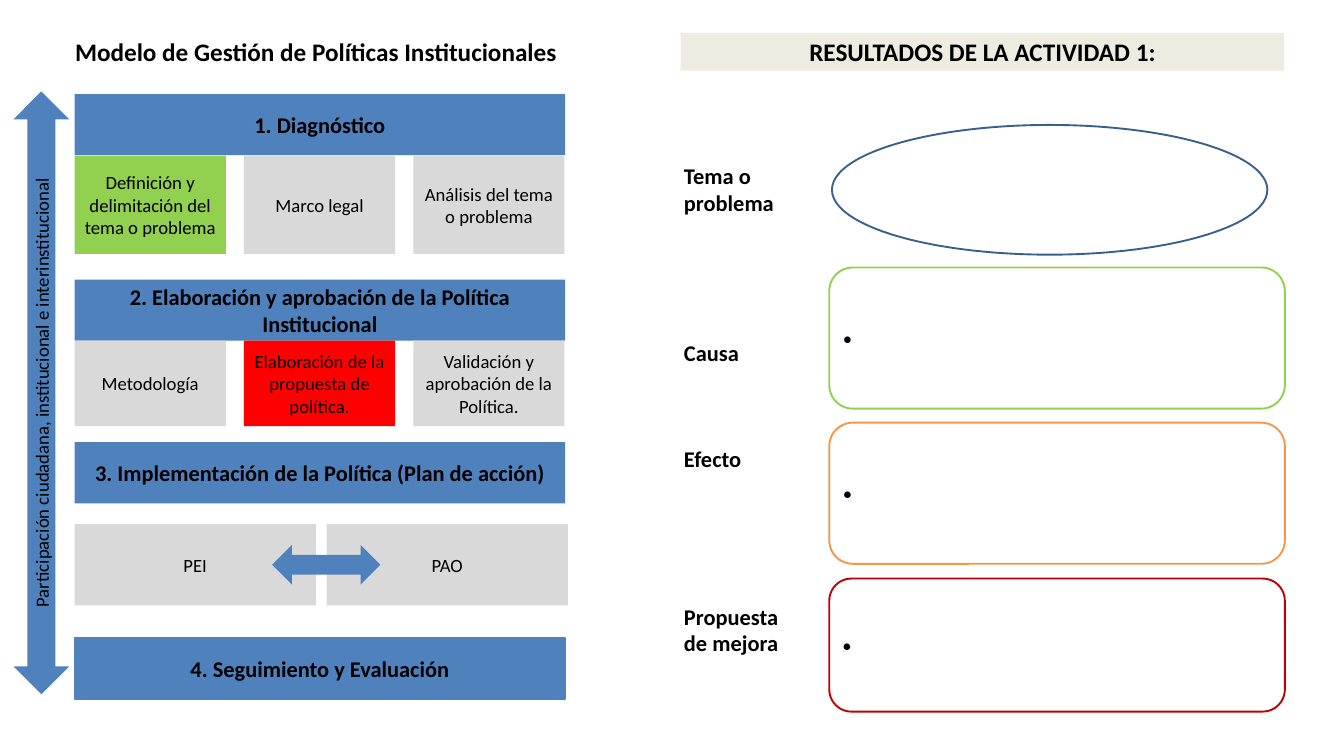
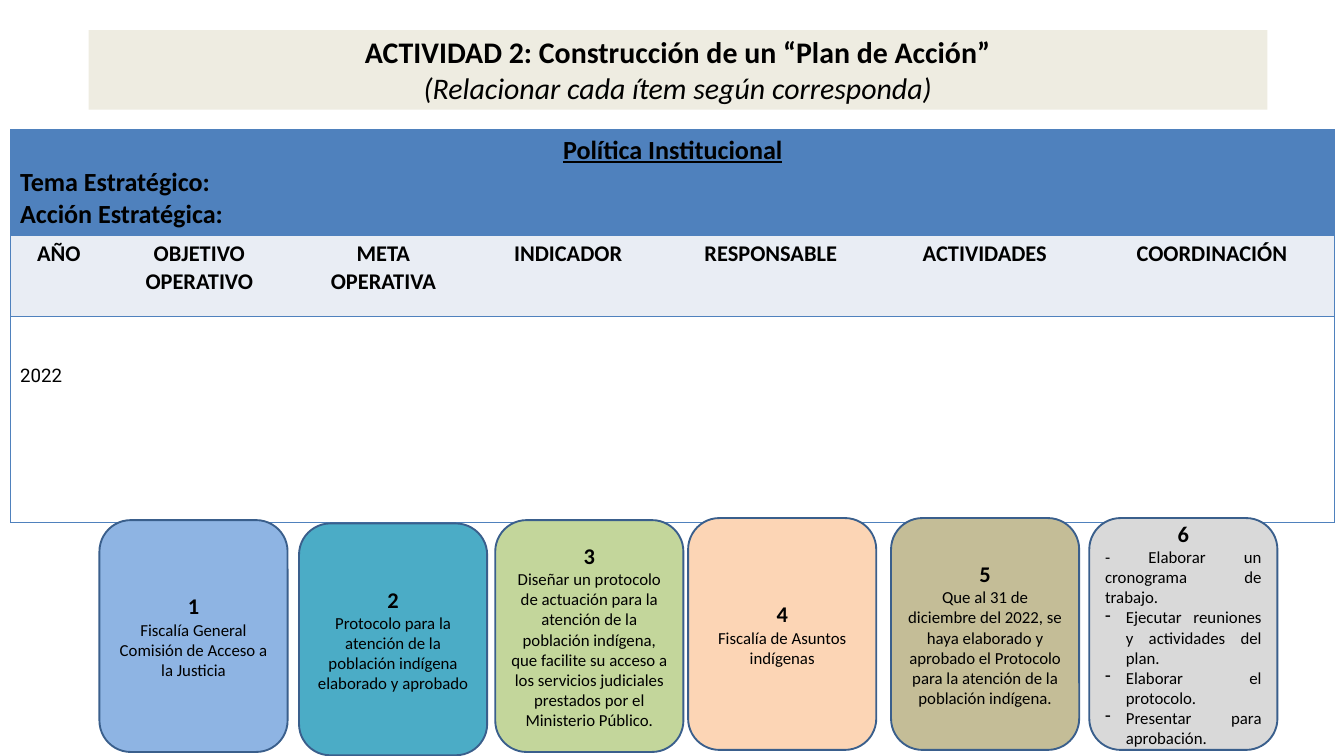
from dataclasses import dataclass

from lxml.etree import SubElement
from pptx import Presentation
from pptx.dml.color import RGBColor
from pptx.enum.shapes import MSO_SHAPE as Kind
from pptx.enum.text import MSO_ANCHOR as Anchor, PP_ALIGN as Align
from pptx.oxml.ns import qn
from pptx.util import Inches, Pt

# Shared look
WIDE, HIGH = 20, 11.25
FONT = "Calibri"
BLACK, WHITE = "000000", "FFFFFF"
BLUE, NAVY, GRAY = "4F81BD", "3A5F8C", "D9D9D9"
GREEN, RED, CREAM, PALE = "92D050", "FF0000", "EEECE1", "E9EDF4"
PLAIN = "{2D5ABB26-0587-4C30-8999-92F81FD0307C}"


@dataclass
class Box:
    """A place in percent of the slide's width and height."""
    x: float
    y: float
    w: float
    h: float

    def emu(self) -> tuple:
        return (Inches(self.x * WIDE / 100), Inches(self.y * HIGH / 100),
                Inches(self.w * WIDE / 100), Inches(self.h * HIGH / 100))


@dataclass
class Band:
    y: float
    text: str
    line: str | None = None


@dataclass
class Step:
    col: int
    text: str
    fill: str = GRAY


@dataclass
class Label:
    y: float
    w: float
    h: float
    text: str
    wrap: bool = False


@dataclass
class Frame:
    y: float
    h: float
    line: str


@dataclass
class Card:
    x: float
    y: float
    fill: str
    text: str
    just: str = ""
    dashes: str = ""


def color(code: str) -> RGBColor:
    return RGBColor.from_string(code)


def write(frame, text: str, *, size=20, bold=False, italic=False, under=False,
          align=Align.CENTER, font=FONT, dash=False) -> None:
    """Add each line of the text as a paragraph."""
    for line in text.split("\n"):
        last = frame.paragraphs[-1]
        para = frame.add_paragraph() if last.runs else last
        para.alignment = align
        run = para.add_run()
        run.text = line
        face = run.font
        face.name, face.size = font, Pt(size)
        face.bold, face.italic, face.underline = bold, italic, under
        face.color.rgb = color(BLACK)
        if dash:
            props = para._p.get_or_add_pPr()
            props.set("marL", str(Inches(0.31)))
            props.set("indent", str(-Inches(0.31)))
            SubElement(props, qn("a:buChar"), char="-")


def draw(slide, kind, box: Box, fill: str | None = None,
         line: str | None = None, anchor=Anchor.MIDDLE):
    shape = slide.shapes.add_shape(kind, *box.emu())
    shape.shadow.inherit = False
    if fill:
        shape.fill.solid()
        shape.fill.fore_color.rgb = color(fill)
    else:
        shape.fill.background()
    if line:
        shape.line.color.rgb = color(line)
        shape.line.width = Pt(2)
    else:
        shape.line.fill.background()
    shape.text_frame.word_wrap = True
    shape.text_frame.vertical_anchor = anchor
    return shape


def block(slide, box: Box, text: str, fill: str, line: str | None = None, **form):
    shape = draw(slide, Kind.RECTANGLE, box, fill, line)
    write(shape.text_frame, text, **form)


def note(slide, box: Box, text: str, wrap: bool = True, **form) -> None:
    frame = slide.shapes.add_textbox(*box.emu()).text_frame
    frame.word_wrap = wrap
    write(frame, text, bold=True, **form)


def head(slide, box: Box, text: str, size: int):
    """Draw the cream heading strip."""
    frame = draw(slide, Kind.RECTANGLE, box, CREAM, anchor=Anchor.TOP).text_frame
    write(frame, text, size=size, bold=True)
    return frame


def edge(cell, sides: str) -> None:
    """Rule the given sides, named in the order L, R, T, B."""
    props = cell._tc.get_or_add_tcPr()
    for spot, side in enumerate(sides):
        rule = SubElement(props, qn("a:ln" + side), w=str(Pt(1)))
        fill = SubElement(rule, qn("a:solidFill"))
        SubElement(fill, qn("a:srgbClr"), val=BLUE)
        props.insert(spot, rule)


# Slide 1: the model on the left
LEFT, FULL, BAR = 5.55, 36.5, 8.09
BANDS = [
    Band(12.44, "1. Diagnóstico"),
    Band(36.98, "2. Elaboración y aprobación de la Política Institucional"),
    Band(58.49, "3. Implementación de la Política (Plan de acción)"),
    Band(84.36, "4. Seguimiento y Evaluación", BLUE),
]
# Row of steps: top, height, column pitch, width, steps
ROWS = [
    (20.6, 12.98, 12.6, 11.25, [
        Step(0, "Definición y delimitación del tema o problema", GREEN),
        Step(1, "Marco legal"),
        Step(2, "Análisis del tema o problema")]),
    (45.07, 11.29, 12.6, 11.25, [
        Step(0, "Metodología"),
        Step(1, "Elaboración de la propuesta de política.", RED),
        Step(2, "Validación y aprobación de la Política.")]),
    (69.33, 10.76, 18.75, 17.95, [Step(0, "PEI"), Step(1, "PAO")]),
]

# Slide 1: the results on the right
LABELS = [
    Label(21.07, 7.75, 8.09, "Tema o\nproblema"),
    Label(44.44, 11.25, 4.44, "Causa", True),
    Label(58.49, 5.3, 4.44, "Efecto"),
    Label(79.29, 8.45, 8.09, "Propuesta\nde mejora"),
]
FRAMES = [Frame(35.38, 18.67, GREEN), Frame(55.91, 18.67, "F79646"),
          Frame(76.53, 17.6, "C00000")]


def model(slide) -> None:
    note(slide, Box(3, 4.36, 41, 4.98),
         "Modelo de Gestión de Políticas Institucionales", size=27)
    for band in BANDS:
        block(slide, Box(LEFT, band.y, FULL, BAR), band.text, BLUE, band.line,
              size=24, bold=True)
    for top, high, pitch, wide, steps in ROWS:
        for step in steps:
            block(slide, Box(LEFT + step.col * pitch, top, wide, high),
                  step.text, step.fill)
    # Arrows
    draw(slide, Kind.LEFT_RIGHT_ARROW, Box(20.25, 72.09, 8.05, 5.24), BLUE)
    side = draw(slide, Kind.LEFT_RIGHT_ARROW, Box(-19.35, 48.27, 44.85, 7.38), BLUE)
    side.rotation = 270
    write(side.text_frame,
          "Participación ciudadana, institucional e interinstitucional")


def results(slide) -> None:
    head(slide, Box(50.65, 4.36, 44.9, 4.98), "RESULTADOS DE LA ACTIVIDAD 1:", 27)
    draw(slide, Kind.OVAL, Box(61.9, 16.53, 32.4, 17.16), line=NAVY)
    for item in LABELS:
        note(slide, Box(50.4, item.y, item.w, item.h), item.text, item.wrap,
             size=24, align=Align.LEFT)
    for item in FRAMES:
        shape = draw(slide, Kind.ROUNDED_RECTANGLE,
                     Box(61.7, item.y, 33.9, item.h), line=item.line)
        write(shape.text_frame, "•", align=Align.LEFT)


# Slide 2: plan table and cards
COLS = [1.43, 2.75, 2.73, 2.77, 3.26, 3.11, 3.65]
TALL = [1.58, 1.2, 3.07]
FILLS = [BLUE, PALE, WHITE]
HEADS = ["AÑO", "OBJETIVO OPERATIVO", "META\nOPERATIVA", "INDICADOR",
         "RESPONSABLE", "ACTIVIDADES", "COORDINACIÓN"]
CARDS = [
    Card(7.4, 68.8, "8EB4E3",
         "Fiscalía General\nComisión de Acceso a la Justicia"),
    Card(22.25, 69.24, "4BACC6",
         "Protocolo para la atención de la población indígena elaborado y aprobado"),
    Card(36.85, 68.8, "C3D69B",
         "Diseñar un protocolo de actuación para la atención de la población "
         "indígena, que facilite su acceso a los servicios judiciales prestados "
         "por el Ministerio Público."),
    Card(51.2, 68.53, "FCD5B5", "Fiscalía de Asuntos indígenas"),
    Card(66.3, 68.53, "C4BD97",
         "Que al 31 de diciembre del 2022, se haya elaborado y aprobado el "
         "Protocolo para la atención de la población indígena."),
    Card(81.05, 68.53, GRAY, "", "- Elaborar un cronograma de trabajo.",
         "Ejecutar reuniones y actividades del plan.\nElaborar el protocolo.\n"
         "Presentar para aprobación."),
]


def plan(slide) -> None:
    place = Box(0.8, 17.16, 98.5, sum(TALL) / HIGH * 100)
    holder = slide.shapes.add_table(len(TALL), len(COLS), *place.emu())
    for style in holder.element.iter(qn("a:tableStyleId")):
        style.text = PLAIN
    table = holder.table
    table.first_row = table.horz_banding = False
    for col, wide in zip(table.columns, COLS):
        col.width = Inches(wide)
    for row, high in zip(table.rows, TALL):
        row.height = Inches(high)
    # Fills, margins and rules
    final = len(COLS) - 1
    for r, fill in enumerate(FILLS):
        for c in range(len(COLS)):
            cell = table.cell(r, c)
            cell.fill.solid()
            cell.fill.fore_color.rgb = color(fill)
            cell.margin_left = cell.margin_right = Inches(0.14)
            cell.margin_top = cell.margin_bottom = Inches(0.07)
            left = "L" if c == 0 else ""
            right = "R" if c == final or r == 0 else ""
            edge(cell, left + right + "TB")
    # Wording
    top = table.cell(0, 0)
    top.merge(table.cell(0, final))
    write(top.text_frame, "Política Institucional", size=28, bold=True, under=True)
    write(top.text_frame, "Tema Estratégico:\nAcción Estratégica:", size=28,
          bold=True, align=Align.LEFT)
    for c, text in enumerate(HEADS):
        write(table.cell(1, c).text_frame, text, size=24, bold=True)
    year = table.cell(2, 0)
    year.margin_top = Inches(0.73)
    write(year.text_frame, "2022", font="Roboto", align=Align.JUSTIFY)


def cards(slide) -> None:
    for rank, card in enumerate(CARDS, 1):
        shape = draw(slide, Kind.ROUNDED_RECTANGLE,
                     Box(card.x, card.y, 14, 30.67), card.fill, NAVY)
        frame = shape.text_frame
        write(frame, str(rank), size=24, bold=True)
        if card.text:
            write(frame, card.text, size=18)
        if card.just:
            write(frame, card.just, size=18, align=Align.JUSTIFY)
        if card.dashes:
            write(frame, card.dashes, size=18, align=Align.JUSTIFY, dash=True)


def main() -> None:
    deck = Presentation()
    deck.slide_width, deck.slide_height = Inches(WIDE), Inches(HIGH)
    blank = deck.slide_layouts[6]

    first = deck.slides.add_slide(blank)
    model(first)
    results(first)

    second = deck.slides.add_slide(blank)
    plan(second)
    title = head(second, Box(6.6, 4, 87.7, 10.49),
                 "ACTIVIDAD 2: Construcción de un “Plan de Acción”", 32)
    write(title, "(Relacionar cada ítem según corresponda)", size=32, italic=True)
    cards(second)

    deck.save("out.pptx")


if __name__ == "__main__":
    main()
